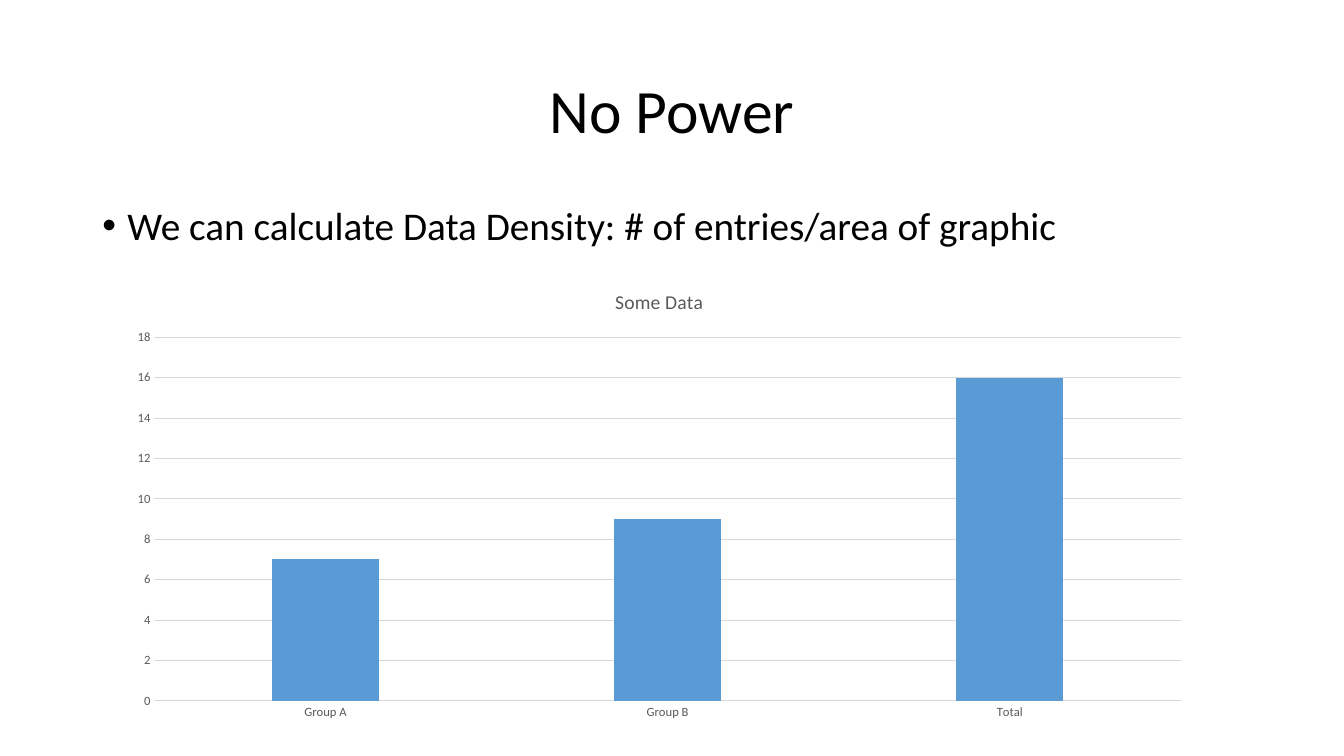
from lxml import etree
from pptx import Presentation
from pptx.chart import data
from pptx.dml.color import RGBColor
from pptx.enum import chart as kinds, text
from pptx.oxml import ns
from pptx.util import Pt

FONT = "Calibri"
HUES = {"ink": "000000", "label": "595959", "grid": "D9D9D9", "bar": "5B9BD5"}


def hue(name):
    return RGBColor.from_string(HUES[name])


def style(font, size, name):
    font.name, font.size, font.bold = FONT, Pt(size), False
    font.color.rgb = hue(name)


def rule(line):
    line.color.rgb = hue("grid")
    line.width = Pt(0.75)


def add_text(slide, box, words, size, anchor):
    """Place one wrapped paragraph in the box and return it."""
    frame = slide.shapes.add_textbox(*map(Pt, box)).text_frame
    frame.word_wrap = True
    frame.vertical_anchor = anchor
    para = frame.paragraphs[0]
    para.text = words
    para.line_spacing = 0.9
    style(para.runs[0].font, size, "ink")
    return para


def add_title(slide, box):
    para = add_text(slide, box, "No Power", 44, text.MSO_ANCHOR.MIDDLE)
    para.alignment = text.PP_ALIGN.CENTER


def add_body(slide, box):
    words = "We can calculate Data Density: # of entries/area of graphic"
    para = add_text(slide, box, words, 28, text.MSO_ANCHOR.TOP)
    para.space_before = Pt(10)
    props = para._p.get_or_add_pPr()
    props.set("marL", str(Pt(18)))
    props.set("indent", str(Pt(-18)))
    etree.SubElement(props, ns.qn("a:buFont"), typeface="Arial")
    etree.SubElement(props, ns.qn("a:buChar"), char="•")


def add_bars(slide, box):
    table = data.CategoryChartData()
    table.categories = ["Group A", "Group B", "Total"]
    table.add_series("Series 1", [7, 9, 16])
    kind = kinds.XL_CHART_TYPE.COLUMN_CLUSTERED
    chart = slide.shapes.add_chart(kind, *map(Pt, box), table).chart
    style(chart.font, 10, "ink")
    chart.has_legend = False

    title = chart.chart_title
    title.text_frame.text = "Some Data"
    title.include_in_layout = False
    style(title.text_frame.paragraphs[0].runs[0].font, 14, "label")

    plot = chart.plots[0]
    plot.gap_width, plot.overlap = 219, -27
    plot.vary_by_categories = False
    fill = plot.series[0].format.fill
    fill.solid()
    fill.fore_color.rgb = hue("bar")

    cats, vals = chart.category_axis, chart.value_axis
    for axis in (cats, vals):
        axis.major_tick_mark = axis.minor_tick_mark = kinds.XL_TICK_MARK.NONE
        style(axis.tick_labels.font, 9, "label")
    rule(cats.format.line)
    vals.format.line.fill.background()
    vals.minimum_scale, vals.maximum_scale, vals.major_unit = 0, 18, 2
    rule(vals.major_gridlines.format.line)


def main():
    deck = Presentation()
    deck.slide_width, deck.slide_height = Pt(960), Pt(540)
    slide = deck.slides.add_slide(deck.slide_layouts[6])
    add_title(slide, (66, 28.75, 828, 104.4))
    add_body(slide, (66, 143.75, 828, 342.6))
    add_bars(slide, (82.8, 193, 776.2, 327.6))
    deck.save("out.pptx")


if __name__ == "__main__":
    main()
